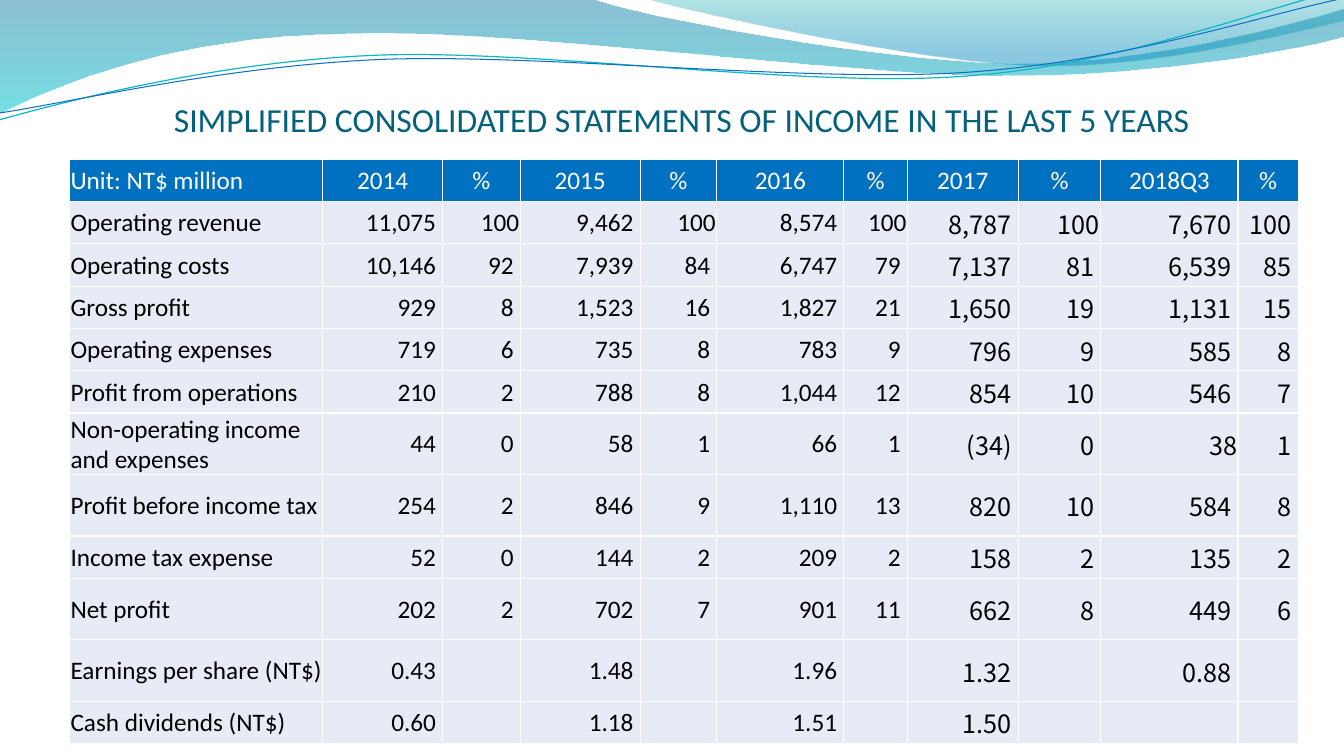
from math import cos, radians, sin
from lxml.etree import SubElement
from pptx import Presentation
from pptx.dml.color import RGBColor
from pptx.enum.text import MSO_ANCHOR, PP_ALIGN
from pptx.oxml.ns import qn
from pptx.util import Inches, Pt

CELL = Inches(1)
WIDE, HIGH = 13.33, 7.5
SANS, NOTO = "Calibri", "Noto Sans CJK SC"
LEFT, MID, RIGHT = PP_ALIGN.LEFT, PP_ALIGN.CENTER, PP_ALIGN.RIGHT
WHITE, BLACK, TEAL = "FFFFFF", "000000", "04617B"
HEAD, BODY = "0070C0", "E7EBF5"
TILT = -2.7

TITLE = "SIMPLIFIED CONSOLIDATED STATEMENTS OF INCOME IN THE LAST 5 YEARS"
COLS = [2.51, 1.19, 0.77, 1.19, 0.76, 1.26, 0.63, 1.1, 0.82, 1.36, 0.6]
LOW, TALL = 0.42, 0.61
TALL_ROWS = {6, 7, 9, 10}
FLUSH = {(1, 2), (1, 4), (1, 6), (1, 8), (6, 9)}
ROWS = [line.split("|") for line in """\
Unit: NT$ million|2014|%|2015|%|2016|%|2017|%|2018Q3|%
Operating revenue|11,075|100|9,462|100|8,574|100|8,787|100|7,670|100
Operating costs|10,146|92|7,939|84|6,747|79|7,137|81|6,539|85
Gross profit|929|8|1,523|16|1,827|21|1,650|19|1,131|15
Operating expenses|719|6|735|8|783|9|796|9|585|8
Profit from operations|210|2|788|8|1,044|12|854|10|546|7
Non-operating income and expenses|44|0|58|1|66|1|(34)|0|38|1
Profit before income tax|254|2|846|9|1,110|13|820|10|584|8
Income tax expense|52|0|144|2|209|2|158|2|135|2
Net profit|202|2|702|7|901|11|662|8|449|6
Earnings per share (NT$)|0.43||1.48||1.96||1.32||0.88|
Cash dividends (NT$)|0.60||1.18||1.51||1.50|||""".splitlines()]

BANDS = [
    ([(0, 0), (5.87, -0.01),
      (6.34, 0.17, 8.85, 0.63, 10.11, 0.63),
      (11.38, 0.63, 12.78, 0.26, 13.33, 0.09), (13.35, 0.36),
      (13.11, 0.44, 11.6, 0.76, 9.94, 0.75),
      (8.29, 0.75, 5.09, 0.28, 3.43, 0.34),
      (1.72, 0.36, 0.61, 0.83, -0.01, 1.13)],
     [(0, "0074A1", 45), (1, "00C6CF", 55)]),
    ([(6.39, -0.01),
      (6.79, 0.11, 9.09, 0.62, 10.25, 0.65),
      (11.41, 0.69, 12.82, 0.32, 13.33, 0.21), (13.33, 0)],
     [(0, "00A1A9", 30), (0.8, "008BBF", 45)]),
]
WAVES = [
    ([(-0.01, 1.19),
      (0.64, 1.01, 2.11, 0.62, 3.69, 0.55),
      (5.27, 0.48, 7.9, 0.87, 9.5, 0.76),
      (11.1, 0.66, 12.52, 0.08, 13.31, -0.1)], (6.65, 0.57), "0AB8BF", 0.85),
    ([(0, 1.12),
      (0.63, 1.03, 2.18, 0.66, 3.78, 0.59),
      (5.37, 0.53, 7.96, 0.82, 9.55, 0.72),
      (11.15, 0.62, 12.55, 0.14, 13.34, -0.02)], (6.67, 0.59), "0F6FC6", 0.75),
]


def tint(code):
    return RGBColor.from_string(code)


def grid(*spans):
    return [round(span * CELL) for span in spans]


def pairs(move):
    return list(zip(move[::2], move[1::2]))


def turn(move, hub, angle):
    c, s = cos(radians(angle)), sin(radians(angle))
    spots = []
    for x, y in pairs(move):
        dx, dy = x - hub[0], y - hub[1]
        spots += [hub[0] + dx * c - dy * s, hub[1] + dx * s + dy * c]
    return spots


def add_curve(slide, moves, close):
    first, *rest = [grid(*move[-2:]) for move in moves]
    pen = slide.shapes.build_freeform(*first)
    pen.add_line_segments(rest, close=close)
    shape = pen.convert_to_shape()
    shape.shadow.inherit = False
    for node, move in zip(list(shape.element.iter(qn("a:lnTo"))), moves[1:]):
        if len(move) == 6:
            bend = SubElement(node.getparent(), qn("a:cubicBezTo"))
            for x, y in pairs(grid(*move)):
                SubElement(bend, qn("a:pt"), x=str(x - shape.left), y=str(y - shape.top))
            node.getparent().replace(node, bend)
    return shape


def add_band(slide, moves, stops):
    band = add_curve(slide, moves, True)
    band.line.fill.background()
    band.fill.gradient()
    band.fill.gradient_angle = 270
    for stop, (place, code, _) in zip(band.fill.gradient_stops, stops):
        stop.position = place
        stop.color.rgb = tint(code)
    for node, (_, _, alpha) in zip(band.element.iter(qn("a:srgbClr")), stops):
        SubElement(node, qn("a:alpha"), val=str(alpha * 1000))


def add_wave(slide, moves, hub, code, width):
    wave = add_curve(slide, [turn(move, hub, -TILT) for move in moves], False)
    wave.rotation = TILT
    wave.fill.background()
    wave.line.color.rgb = tint(code)
    wave.line.width = Pt(width)


def put_text(frame, text, size=18, font=SANS, color=BLACK, align=LEFT):
    line = frame.paragraphs[0]
    line.alignment = align
    run = line.add_run()
    run.text = text
    run.font.size = Pt(size)
    run.font.name = font
    run.font.bold = False
    run.font.color.rgb = tint(color)


def add_title(slide, text):
    box = slide.shapes.add_textbox(*grid(1.24, 0.68, 11.04, 0.7))
    frame = box.text_frame
    frame.word_wrap = True
    frame.vertical_anchor = MSO_ANCHOR.BOTTOM
    frame.margin_left = frame.margin_right = frame.margin_bottom = 0
    put_text(frame, text, size=24, color=TEAL, align=MID)


def add_rules(cell, code, width):
    props = cell._tc.get_or_add_tcPr()
    for side in ("lnL", "lnR", "lnT", "lnB"):
        rule = SubElement(props, qn(f"a:{side}"), w=str(Pt(width)))
        fill = SubElement(rule, qn("a:solidFill"))
        SubElement(fill, qn("a:srgbClr"), val=code)


def fill_cell(cell, text, row, col):
    add_rules(cell, WHITE, 1)
    cell.fill.solid()
    cell.fill.fore_color.rgb = tint(BODY if row else HEAD)
    cell.vertical_anchor = MSO_ANCHOR.MIDDLE
    cell.margin_left, cell.margin_top = grid(0.01, 0.01)
    cell.margin_right, cell.margin_bottom = grid(0.01 if col else 0, 0)
    if text:
        tail = " " if row and col and (row, col) not in FLUSH else ""
        put_text(cell.text_frame, text + tail,
                 font=NOTO if row and col > 6 else SANS,
                 color=BLACK if row else WHITE,
                 align=LEFT if not col else RIGHT if row else MID)


def add_grid(slide, rows):
    highs = [TALL if row in TALL_ROWS else LOW for row in range(len(rows))]
    frame = slide.shapes.add_table(
        len(rows), len(COLS), *grid(0.69, 1.58, sum(COLS), sum(highs)))
    table = frame.table
    table.first_row = table.horz_banding = False
    for col, wide in zip(table.columns, grid(*COLS)):
        col.width = wide
    for line, high in zip(table.rows, grid(*highs)):
        line.height = high
    for row, texts in enumerate(rows):
        for col, text in enumerate(texts):
            fill_cell(table.cell(row, col), text, row, col)


def main():
    deck = Presentation()
    deck.slide_width, deck.slide_height = grid(WIDE, HIGH)
    slide = deck.slides.add_slide(deck.slide_layouts[6])
    for band in BANDS:
        add_band(slide, *band)
    for wave in WAVES:
        add_wave(slide, *wave)
    add_title(slide, TITLE)
    add_grid(slide, ROWS)
    deck.save("out.pptx")


if __name__ == "__main__":
    main()
